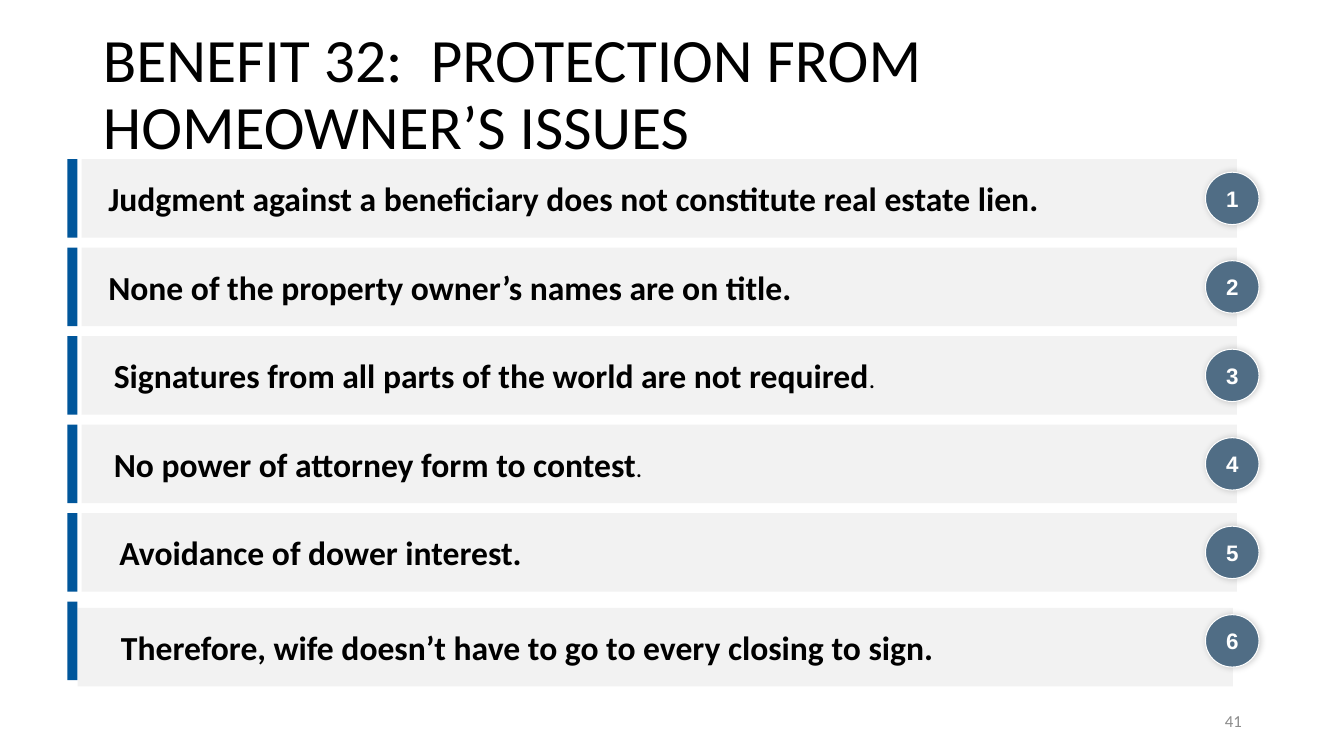
from lxml import etree
from pptx import Presentation
from pptx.dml.color import RGBColor
from pptx.enum.shapes import MSO_SHAPE as Preset
from pptx.enum.text import MSO_ANCHOR as Anchor, MSO_AUTO_SIZE as AutoSize, PP_ALIGN as Align
from pptx.oxml.ns import qn
from pptx.util import Cm, Pt

BLACK = RGBColor(0x00, 0x00, 0x00)
WHITE = RGBColor(0xFF, 0xFF, 0xFF)
GRAY = RGBColor(0x8C, 0x8C, 0x8C)
PANEL = RGBColor(0xF2, 0xF2, 0xF2)
BLUE = RGBColor(0x00, 0x56, 0x9B)
SLATE = RGBColor(0x50, 0x6D, 0x85)

TITLE_FONT = dict(name="Calibri", size=Pt(44), bold=False)
NUMBER_FONT = dict(name="Calibri", size=Pt(12))
BENEFIT_FONT = dict(name="Calibri", size=Pt(24), bold=True)
PERIOD_FONT = dict(name="Calibri", size=Pt(18), bold=False)
BADGE_FONT = dict(name="Arial", size=Pt(16), bold=True)

ROW_TOP, ROW_PITCH, ROW_HEIGHT = 4.01, 2.23, 1.98
SPACE_WIDTH = 0.14

BENEFITS = [
    ("Judgment against a beneficiary does not constitute real estate lien.", "", 3),
    ("None of the property owner’s names are on title.", "", 3),
    ("Signatures from all parts of the world are not required", ".", 4),
    ("No power of attorney form to contest", ".", 4),
    ("Avoidance of dower interest.", "", 5),
    ("Therefore, wife doesn’t have to go to every closing to sign.", "", 6),
]


def add_run(paragraph, text, font_format, color):
    run = paragraph.add_run()
    run.text = text
    for attribute, value in font_format.items():
        setattr(run.font, attribute, value)
    run.font.color.rgb = color


def add_block(preset, left, top, width, height, color):
    shape = slide.shapes.add_shape(preset, Cm(left), Cm(top), Cm(width), Cm(height))
    shape.shadow.inherit = False
    shape.fill.solid()
    shape.fill.fore_color.rgb = color
    shape.line.fill.background()
    return shape


presentation = Presentation()
presentation.slide_width = Cm(33.87)
presentation.slide_height = Cm(19.05)
slide = presentation.slides.add_slide(presentation.slide_layouts[5])

title = slide.shapes.title
title.left, title.top, title.width, title.height = Cm(2.34), Cm(0.15), Cm(29.21), Cm(4.55)
title_frame = title.text_frame
title_frame.auto_size = AutoSize.NONE
title_frame.vertical_anchor = Anchor.MIDDLE
paragraph = title_frame.paragraphs[0]
paragraph.alignment = Align.LEFT
paragraph.line_spacing = 0.9
add_run(paragraph, "BENEFIT 32:  PROTECTION FROM HOMEOWNER’S ISSUES", TITLE_FONT, BLACK)

page_number = slide.shapes.add_textbox(Cm(23.93), Cm(17.65), Cm(7.62), Cm(1.02))
page_number.text_frame.word_wrap = True
page_number.text_frame.vertical_anchor = Anchor.MIDDLE
paragraph = page_number.text_frame.paragraphs[0]
paragraph.alignment = Align.RIGHT
add_run(paragraph, "41", NUMBER_FONT, GRAY)

for index, (benefit, period, indent) in enumerate(BENEFITS):
    top = ROW_TOP + index * ROW_PITCH
    is_last = index == len(BENEFITS) - 1
    panel_left, panel_top = (1.96, top + 0.16) if is_last else (2.06, top)

    panel = add_block(Preset.RECTANGLE, panel_left, panel_top, 29.11, ROW_HEIGHT, PANEL)
    panel_format = dict(
        word_wrap=True,
        vertical_anchor=Anchor.MIDDLE,
        margin_left=Cm(0.25 + indent * SPACE_WIDTH),
        margin_right=Cm(1.02),
        margin_top=Cm(0.13),
        margin_bottom=Cm(0.13),
    )
    for attribute, value in panel_format.items():
        setattr(panel.text_frame, attribute, value)
    paragraph = panel.text_frame.paragraphs[0]
    paragraph.alignment = Align.LEFT
    add_run(paragraph, benefit, BENEFIT_FONT, BLACK)
    if period:
        add_run(paragraph, period, PERIOD_FONT, BLACK)

    add_block(Preset.RECTANGLE, 1.7, top, 0.25, ROW_HEIGHT, BLUE)

    badge = add_block(Preset.OVAL, 30.38, top + 0.33, 1.35, 1.32, SLATE)
    badge.line.color.rgb = WHITE
    badge.line.width = Pt(0.75)
    effects = badge._element.spPr.find(qn("a:effectLst"))
    shadow = etree.SubElement(
        effects, qn("a:outerShdw"), blurRad=str(Pt(5)), dist=str(Pt(1)), dir="0", rotWithShape="0"
    )
    shadow_color = etree.SubElement(shadow, qn("a:srgbClr"), val="000000")
    etree.SubElement(shadow_color, qn("a:alpha"), val="20000")
    badge.text_frame.vertical_anchor = Anchor.MIDDLE
    badge.text_frame.word_wrap = False
    paragraph = badge.text_frame.paragraphs[0]
    paragraph.alignment = Align.CENTER
    add_run(paragraph, str(index + 1), BADGE_FONT, WHITE)

presentation.save("out.pptx")
